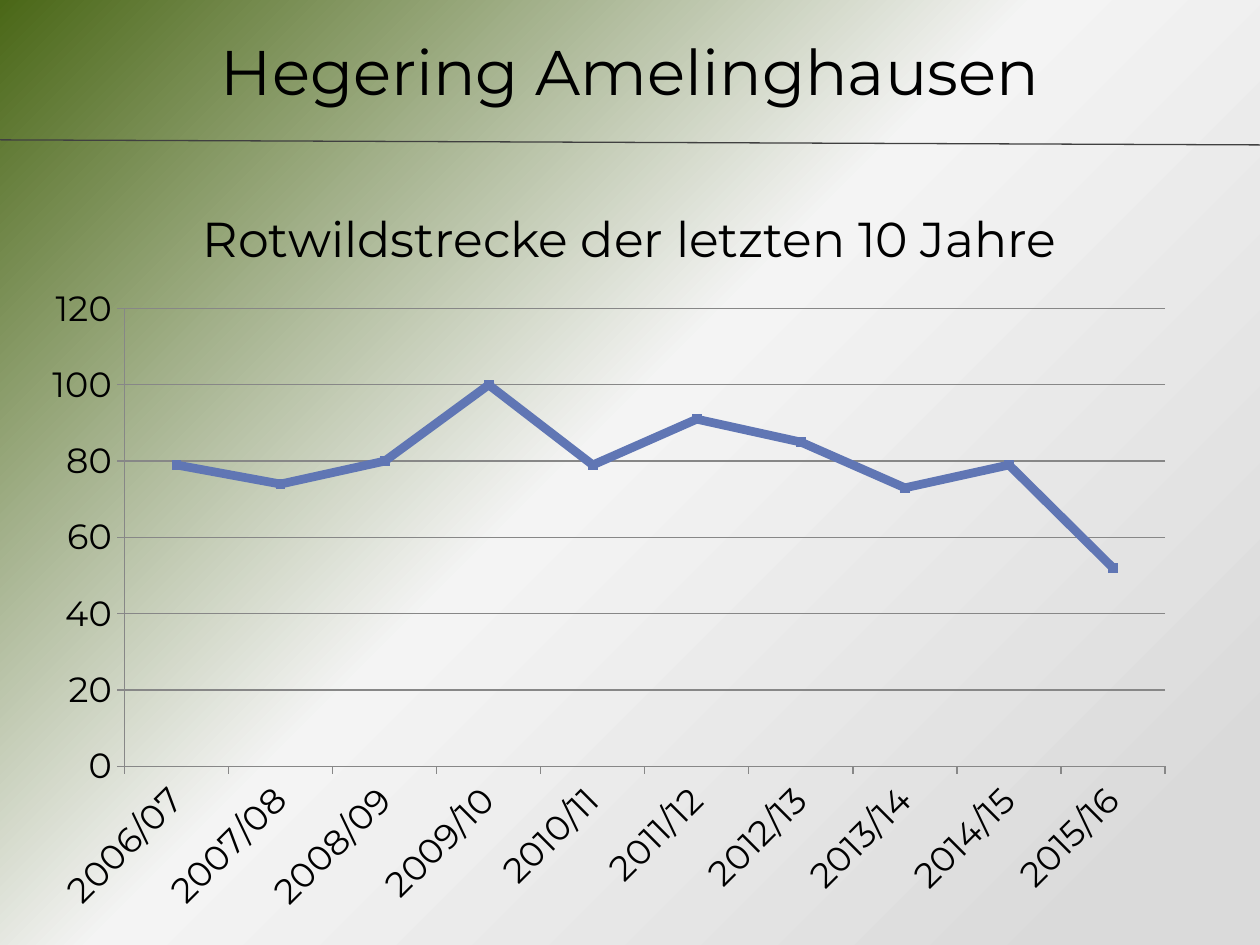
import pptx
import pptx.chart.data
import pptx.dml.color
import pptx.enum.chart
import pptx.enum.shapes
import pptx.enum.text
import pptx.oxml
import pptx.oxml.ns
import pptx.util
from lxml import etree

Inches = pptx.util.Inches
Pt = pptx.util.Pt
qn = pptx.oxml.ns.qn


def color(value):
    return pptx.dml.color.RGBColor.from_string(value)


class SlideBuilder:
    font_name = "Montserrat"
    ink = "000000"
    rule_color = "404040"
    grid_color = "878787"
    series_color = "6076B4"

    def __init__(self, deck):
        self.page = deck.slides.add_slide(deck.slide_layouts[6])

    def style_font(self, font, size):
        font.name = self.font_name
        font.size = Pt(size)
        font.bold = False
        font.color.rgb = color(self.ink)

    def background(self, stops, angle):
        fill = self.page.background.fill
        fill.gradient()
        fill.gradient_angle = 360 - angle
        stop_list = fill.gradient_stops[0]._gs.getparent()
        for stop in list(stop_list):
            stop_list.remove(stop)
        for percent, value in stops:
            stop = etree.SubElement(stop_list, qn("a:gs"), pos=str(percent * 1000))
            etree.SubElement(stop, qn("a:srgbClr"), val=value)

    def text(self, content, left, top, width, height, size, anchor, spacing=None):
        box = self.page.shapes.add_textbox(
            Inches(left), Inches(top), Inches(width), Inches(height)
        )
        frame = box.text_frame
        frame.word_wrap = True
        frame.vertical_anchor = anchor
        para = frame.paragraphs[0]
        para.alignment = pptx.enum.text.PP_ALIGN.CENTER
        if spacing:
            para.line_spacing = Pt(spacing)
        span = para.add_run()
        span.text = content
        self.style_font(span.font, size)

    def line(self, start, end):
        connector = self.page.shapes.add_connector(
            pptx.enum.shapes.MSO_CONNECTOR.STRAIGHT,
            *(Inches(value) for value in start + end),
        )
        connector.line.color.rgb = color(self.rule_color)
        connector.line.width = Pt(0.75)
        etree.SubElement(connector._element.spPr, qn("a:effectLst"))

    def line_chart(self, categories, values, left, top, width, height, plot_area):
        data = pptx.chart.data.CategoryChartData()
        data.categories = categories
        data.add_series("Series 1", values)
        chart = self.page.shapes.add_chart(
            pptx.enum.chart.XL_CHART_TYPE.LINE_MARKERS_STACKED,
            Inches(left), Inches(top), Inches(width), Inches(height), data,
        ).chart
        chart.has_title = False
        chart.has_legend = False
        self.style_font(chart.font, 18)
        chart.font.name = "Vollkorn"
        chart.plots[0].vary_by_categories = False
        self.style_series(chart.plots[0].series[0])
        for axis in (chart.category_axis, chart.value_axis):
            self.style_axis(axis)
        chart.category_axis.has_major_gridlines = False
        label_body = chart.category_axis._element.find(qn("c:txPr")).find(qn("a:bodyPr"))
        label_body.set("rot", "-2700000")
        scale = chart.value_axis
        scale.minimum_scale, scale.maximum_scale, scale.major_unit = 0, 120, 20
        scale.has_major_gridlines = True
        scale.major_gridlines.format.line.color.rgb = color(self.grid_color)
        scale.major_gridlines.format.line.width = Pt(0.75)
        self.place_plot(chart, plot_area)

    def style_series(self, series):
        series.smooth = False
        series.format.line.color.rgb = color(self.series_color)
        series.format.line.width = Pt(5)
        marker = series.marker
        marker.style = pptx.enum.chart.XL_MARKER_STYLE.SQUARE
        marker.size = 5
        marker.format.fill.solid()
        marker.format.fill.fore_color.rgb = color(self.series_color)
        marker.format.line.color.rgb = color(self.series_color)

    def style_axis(self, axis):
        axis.major_tick_mark = pptx.enum.chart.XL_TICK_MARK.OUTSIDE
        axis.minor_tick_mark = pptx.enum.chart.XL_TICK_MARK.NONE
        axis.format.line.color.rgb = color(self.grid_color)
        axis.format.line.width = Pt(0.75)
        self.style_font(axis.tick_labels.font, 20)

    def place_plot(self, chart, plot_area):
        plot = chart._chartSpace.find(".//" + qn("c:plotArea"))
        for previous in plot.findall(qn("c:layout")):
            plot.remove(previous)
        layout = etree.Element(qn("c:layout"))
        manual = etree.SubElement(layout, qn("c:manualLayout"))
        settings = [("layoutTarget", "inner"), ("xMode", "edge"), ("yMode", "edge")]
        settings += zip("xywh", plot_area)
        for name, value in settings:
            etree.SubElement(manual, qn("c:" + name), val=str(value))
        plot.insert(0, layout)


def main():
    deck = pptx.Presentation()
    deck.slide_width = Inches(10)
    deck.slide_height = Inches(7.5)
    anchor = pptx.enum.text.MSO_ANCHOR
    builder = SlideBuilder(deck)
    builder.background([(0, "4A6717"), (47, "F4F4F4"), (92, "DADADA")], 45)
    builder.text("Hegering Amelinghausen", 0, 0.21, 10, 1.01, 36, anchor.TOP)
    builder.line((-0.02, 1.11), (10, 1.15))
    builder.text(
        "Rotwildstrecke der letzten 10 Jahre",
        0.27, 1.15, 9.45, 1.02, 28, anchor.BOTTOM, spacing=58,
    )
    seasons = [f"{year}/{(year + 1) % 100:02d}" for year in range(2006, 2016)]
    bags = [79, 74, 80, 100, 79, 91, 85, 73, 79, 52]
    builder.line_chart(
        seasons, bags, 0.27, 2.19, 9.45, 5.19, (0.076, 0.05, 0.874, 0.7)
    )
    deck.save("out.pptx")


if __name__ == "__main__":
    main()
